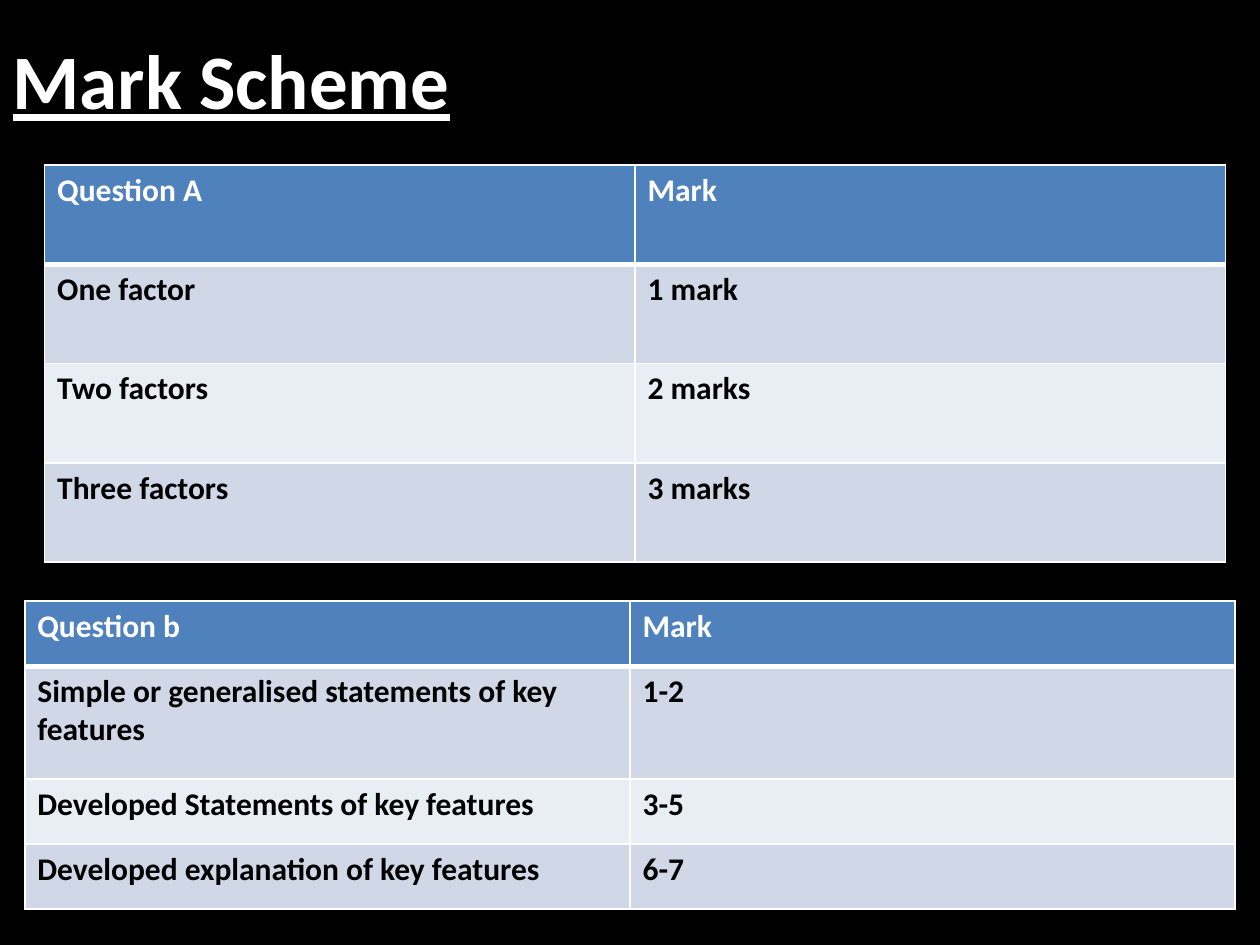
import lxml.etree
import pptx
import pptx.dml.color
import pptx.enum.text
import pptx.oxml.ns
import pptx.util

Cm = pptx.util.Cm
RGBColor = pptx.dml.color.RGBColor

BLACK = RGBColor(0x00, 0x00, 0x00)
WHITE = RGBColor(0xFF, 0xFF, 0xFF)
HEADER_BLUE = RGBColor(0x4F, 0x81, 0xBD)
BAND_DARK = RGBColor(0xD0, 0xD8, 0xE8)
BAND_LIGHT = RGBColor(0xE9, 0xED, 0xF4)

QUESTION_A = [
    ("Question A", "Mark"),
    ("One factor", "1 mark"),
    ("Two factors", "2 marks"),
    ("Three factors", "3 marks"),
]
QUESTION_B = [
    ("Question b", "Mark"),
    ("Simple or generalised statements of key features", "1-2"),
    ("Developed Statements of key features", "3-5"),
    ("Developed explanation of key features", "6-7"),
]


def write_text(frame, text, size=18, color=BLACK, bold=True, underline=None):
    para = frame.paragraphs[0]
    para.alignment = pptx.enum.text.PP_ALIGN.LEFT
    span = para.add_run()
    span.text = text
    font = span.font
    font.name = "Calibri"
    font.size = pptx.util.Pt(size)
    font.bold = bold
    font.underline = underline
    font.color.rgb = color


def set_borders(cell, color=WHITE, **widths):
    """Draw the cell edges L, R, T and B, with widths in points."""
    qn = pptx.oxml.ns.qn
    properties = cell._tc.get_or_add_tcPr()
    for position, (side, width) in enumerate(widths.items()):
        line = lxml.etree.Element(qn(f"a:ln{side}"), w=str(pptx.util.Pt(width)))
        fill = lxml.etree.SubElement(line, qn("a:solidFill"))
        lxml.etree.SubElement(fill, qn("a:srgbClr"), val=str(color))
        properties.insert(position, line)


def add_title(page, text):
    title = page.shapes.title
    title.left, title.top = Cm(0), Cm(0)
    title.width, title.height = Cm(22.86), Cm(3.18)
    title.text_frame.vertical_anchor = pptx.enum.text.MSO_ANCHOR.MIDDLE
    write_text(title.text_frame, text, size=44, color=WHITE, underline=True)


def add_mark_table(page, rows, left, top, column_width, row_heights):
    columns = len(rows[0])
    table = page.shapes.add_table(
        len(rows), columns, Cm(left), Cm(top),
        Cm(column_width * columns), Cm(sum(row_heights))).table
    for column in table.columns:
        column.width = Cm(column_width)
    for i, (texts, height) in enumerate(zip(rows, row_heights)):
        table.rows[i].height = Cm(height)
        header = i == 0
        band = BAND_DARK if i % 2 else BAND_LIGHT
        for j, text in enumerate(texts):
            cell = table.cell(i, j)
            cell.fill.solid()
            cell.fill.fore_color.rgb = HEADER_BLUE if header else band
            # A thick rule parts the header from the first body row
            set_borders(cell, L=1, R=1, T=3 if i == 1 else 1, B=3 if header else 1)
            write_text(cell.text_frame, text, color=WHITE if header else BLACK)


def main():
    deck = pptx.Presentation()
    deck.slide_width, deck.slide_height = Cm(25.4), Cm(19.05)
    page = deck.slides.add_slide(deck.slide_layouts[5])

    # Background and title
    page.background.fill.solid()
    page.background.fill.fore_color.rgb = BLACK
    add_title(page, "Mark Scheme")

    # One table for each question
    add_mark_table(page, QUESTION_A, left=0.9, top=3.33,
                   column_width=11.9, row_heights=[2] * 4)
    add_mark_table(page, QUESTION_B, left=0.5, top=12.12,
                   column_width=12.2, row_heights=[1.31, 2.27, 1.31, 1.31])

    deck.save("out.pptx")


if __name__ == "__main__":
    main()
